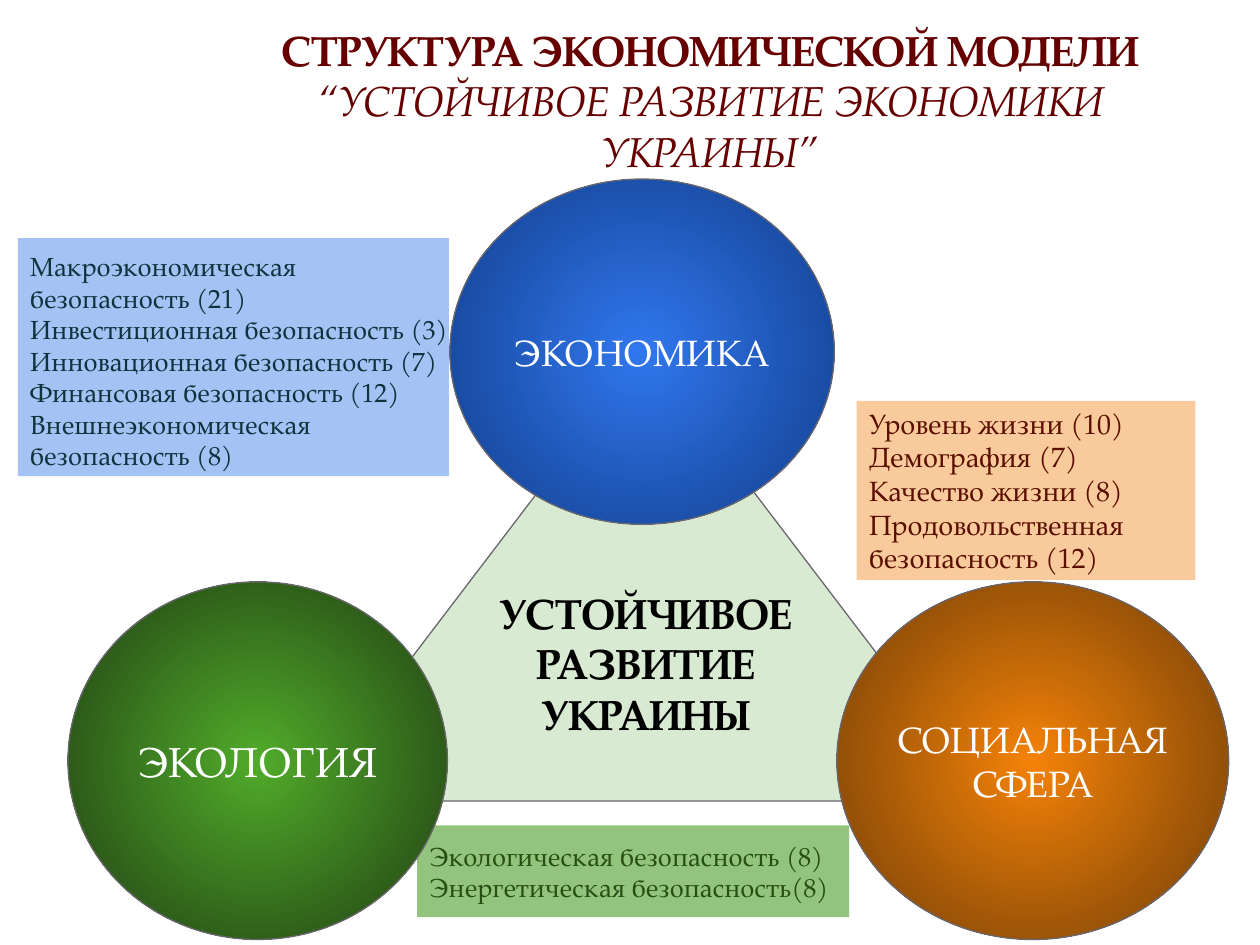
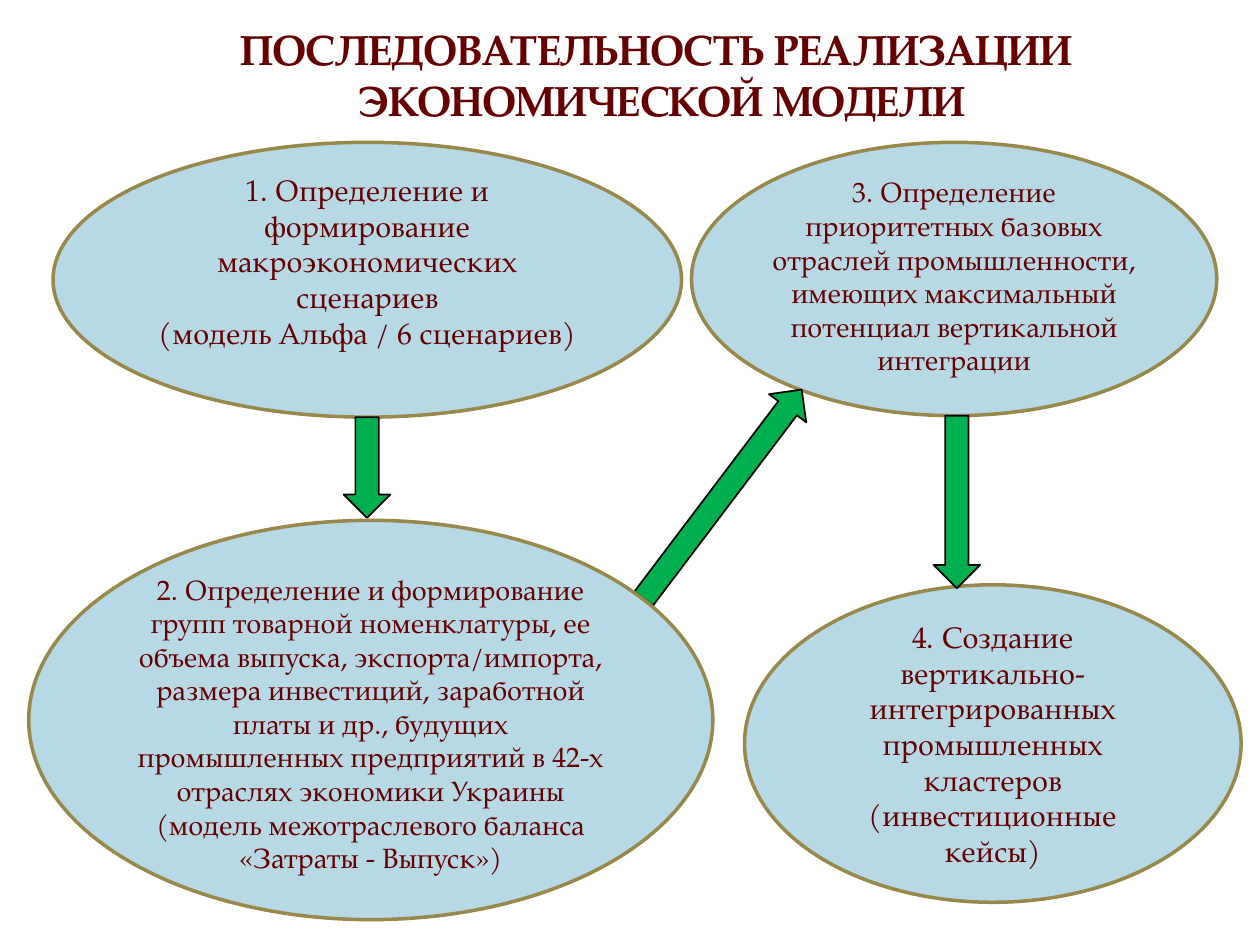
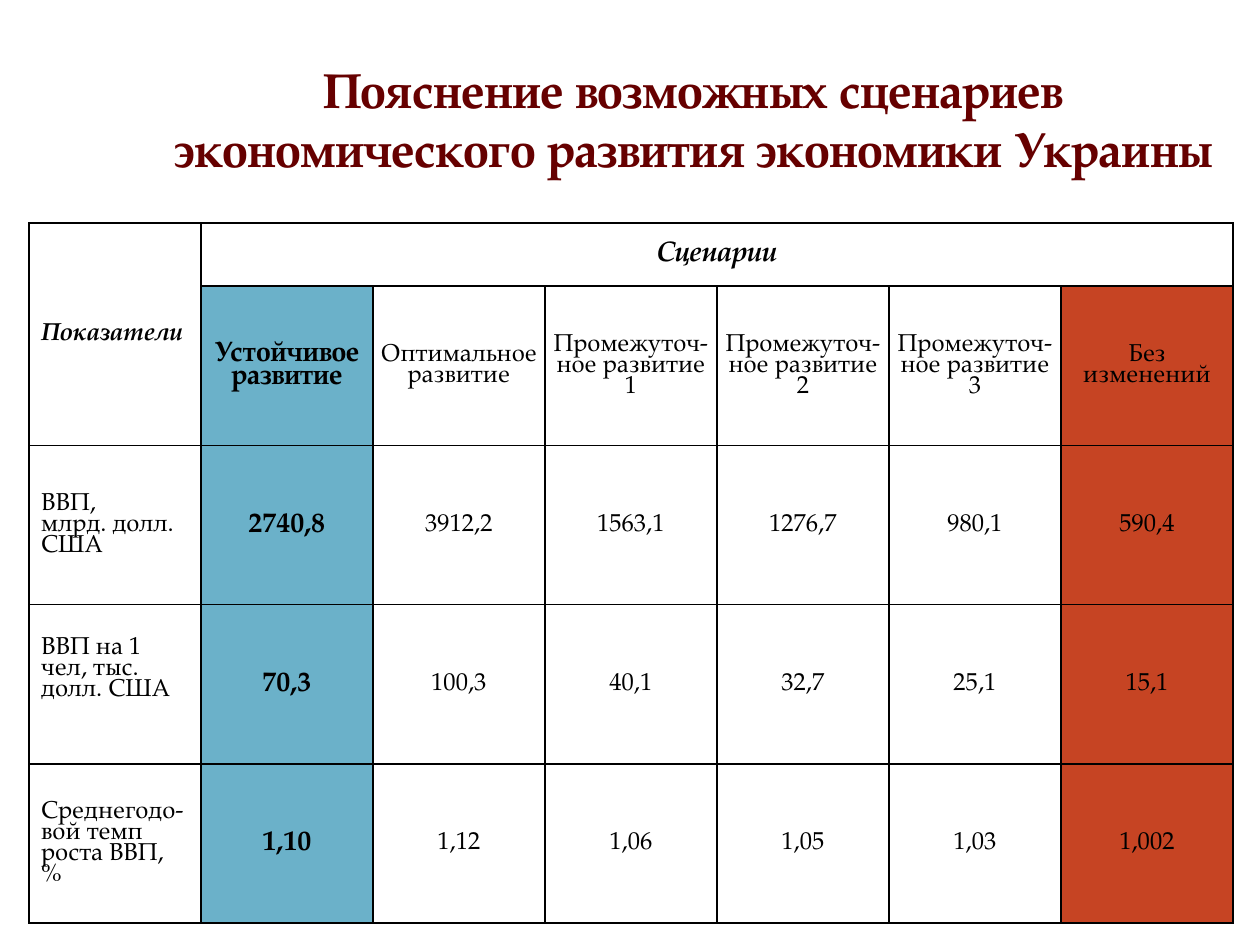
"""Builds three slides on the economic model of sustainable development."""
from copy import deepcopy

from lxml.etree import SubElement
from pptx import Presentation
from pptx.dml.color import RGBColor
from pptx.enum.shapes import MSO_SHAPE as Shape
from pptx.enum.text import MSO_ANCHOR as Anchor, PP_ALIGN as Align
from pptx.oxml.ns import qn
from pptx.util import Cm, Pt

FONT = "TeX Gyre Pagella"
COLORS = {
    "title": "660000", "black": "000000", "white": "FFFFFF", "outline": "69676D",
    "economy_box": "A4C2F4", "economy_text": "0C343D", "economy": "3177EE", "economy_edge": "113D8A",
    "social_box": "F9CB9C", "social_text": "5B0F00", "social": "F48208", "social_edge": "703E08",
    "ecology_box": "93C47D", "ecology_text": "274E13", "ecology": "51AB2A", "ecology_edge": "203E13",
    "triangle": "D9EAD3", "step": "A6D0DF", "step_line": "98894B", "arrow": "00B050",
    "best": "6BB1C9", "worst": "C64423",
}


def rgb(name):
    return RGBColor.from_string(COLORS[name])


def write(frame, text, size=16, color="title", bold=False, italic=False, align=Align.CENTER,
          spacing=None, tail=""):
    """Fill a text frame; text is one paragraph or a list, tail is a closing italic span."""
    paragraphs = [text] if isinstance(text, str) else text
    for index, content in enumerate(paragraphs):
        para = frame.add_paragraph() if index else frame.paragraphs[0]
        para.text = content
        para.alignment = align
        para.line_spacing = spacing
        if tail:
            para.add_run().text = tail
        for span in para.runs:
            in_tail = bool(tail) and span.text == tail
            font = span.font
            font.name, font.size = FONT, Pt(size)
            font.bold, font.italic = bold and not in_tail, italic or in_tail
            font.color.rgb = rgb(color)
        for line_break in para._p.findall(qn("a:br")):
            line_break.insert(0, deepcopy(para.runs[0]._r.rPr))


def set_margins(holder, margins):
    """Set left, top, right and bottom margins of a text frame or cell."""
    (holder.margin_left, holder.margin_top,
     holder.margin_right, holder.margin_bottom) = [Cm(margin) for margin in margins]


class Deck:
    """Holds the presentation style and the current slide."""

    def __init__(self):
        self.deck = Presentation()
        self.deck.slide_width, self.deck.slide_height = Cm(25.4), Cm(19.05)
        self.page = None

    def new_page(self):
        self.page = self.deck.slides.add_slide(self.deck.slide_layouts[6])

    def title(self, place, text, size=24, side=0.25, tail=""):
        frame = self.page.shapes.add_textbox(*map(Cm, place)).text_frame
        frame.word_wrap = True
        frame.vertical_anchor = Anchor.MIDDLE
        set_margins(frame, (side, 0.13, side, 0.13))
        write(frame, text, size=size, bold=True, tail=tail)

    def shape(self, kind, place, fill, edge=None, line=None, width=0.75, alpha=None, rotation=0):
        box = self.page.shapes.add_shape(kind, *map(Cm, place))
        box.shadow.inherit = False
        box.rotation = rotation
        if edge:
            self.radial_fill(box.fill, fill, edge)
        else:
            box.fill.solid()
            box.fill.fore_color.rgb = rgb(fill)
        if alpha:
            color = box._element.spPr.find(qn("a:solidFill"))[0]
            SubElement(color, qn("a:alpha"), val=str(alpha * 1000))
        if line:
            box.line.color.rgb = rgb(line)
            box.line.width = Pt(width)
        else:
            box.line.fill.background()
        return box

    def radial_fill(self, fill, center, edge):
        fill.gradient()
        for stop, name, position in zip(fill.gradient_stops, (center, edge), (0, 1)):
            stop.color.rgb = rgb(name)
            stop.position = position
        gradient = fill._xPr.find(qn("a:gradFill"))
        gradient.remove(gradient.find(qn("a:lin")))
        circle = SubElement(gradient, qn("a:path"), path="circle")
        SubElement(circle, qn("a:fillToRect"), dict.fromkeys("ltrb", "50000"))

    def label(self, box, text, margins=(0, 0, 0, 0), anchor=Anchor.MIDDLE, **style):
        frame = box.text_frame
        frame.word_wrap = True
        frame.vertical_anchor = anchor
        set_margins(frame, margins)
        write(frame, text, **style)

    def note(self, place, topic, text, size=15, right=0.25, anchor=Anchor.MIDDLE):
        box = self.shape(Shape.RECTANGLE, place, topic + "_box")
        self.label(box, text, (0.25, 0.25, right, 0.25), anchor,
                   size=size, color=topic + "_text", align=Align.LEFT)

    def sphere(self, place, topic, text, size=21):
        box = self.shape(Shape.OVAL, place, topic, edge=topic + "_edge", line="outline")
        self.label(box, text, (0, 0.25, 0, 0.25), size=size, color="white")

    def step(self, place, text, size, top=0, bottom=0):
        box = self.shape(Shape.OVAL, place, "step", line="step_line", width=2, alpha=80)
        self.label(box, text, (0, top, 0, bottom), size=size)

    def arrow(self, place, rotation=0):
        self.shape(Shape.DOWN_ARROW, place, "arrow", line="black", width=1, rotation=rotation)

    def table(self, place, rows, heights):
        table = self.page.shapes.add_table(len(rows), len(rows[0]), *map(Cm, place)).table
        table.first_row = table.horz_banding = False
        for row, height in zip(table.rows, heights):
            row.height = Cm(height)
        for row_index, values in enumerate(rows):
            for column, text in enumerate(values):
                self.cell(table.cell(row_index, column), text, row_index, column)
        table.cell(0, 0).merge(table.cell(1, 0))
        table.cell(0, 1).merge(table.cell(0, len(rows[0]) - 1))

    def cell(self, cell, text, row, column):
        properties = cell._tc.get_or_add_tcPr()
        for side in ("a:lnL", "a:lnR", "a:lnT", "a:lnB"):
            border = SubElement(properties, qn(side), w=str(Pt(1)))
            SubElement(SubElement(border, qn("a:solidFill")), qn("a:srgbClr"), val=COLORS["black"])
        cell.fill.solid()
        fills = {1: "best", 6: "worst"} if row else {}
        cell.fill.fore_color.rgb = rgb(fills.get(column, "white"))
        cell.vertical_anchor = Anchor.MIDDLE
        side = 0 if row == 1 and column < 6 else 0.25
        set_margins(cell, (side, 0.13, side, 0.73 if (row, column) == (3, 0) else 0.13))
        if text:
            write(cell.text_frame, text, size=16 if column == 1 else 14, color="black",
                  bold=row == 0 or column == 1, italic=row == 0,
                  align=Align.CENTER if column else Align.LEFT, spacing=0.85)

    def structure_page(self):
        self.new_page()
        self.note((0.36, 4.8, 8.69, 4.8), "economy", [
            "Макроэкономическая безопасность (21)", "Инвестиционная безопасность (3)",
            "Инновационная безопасность (7)", "Финансовая безопасность (12)",
            "Внешнеэкономическая безопасность (8)"], right=0, anchor=Anchor.TOP)
        self.note((17.27, 8.08, 6.83, 3.61), "social", [
            "Уровень жизни (10)", "Демография (7)", "Качество жизни (8)",
            "Продовольственная безопасность (12)"], size=16)
        self.note((8.41, 16.64, 8.71, 1.85), "ecology", [
            "Экологическая безопасность (8)", "Энергетическая безопасность(8)"])
        self.title((4.04, 0.2, 20.55, 3.63), "СТРУКТУРА ЭКОНОМИЧЕСКОЙ МОДЕЛИ ",
                   tail="“УСТОЙЧИВОЕ РАЗВИТИЕ ЭКОНОМИКИ УКРАИНЫ”")
        triangle = self.shape(Shape.ISOSCELES_TRIANGLE, (6.1, 7.06, 13.84, 9.09),
                              "triangle", line="outline")
        triangle.adjustments[0] = 0.5
        self.label(triangle, "УСТОЙЧИВОЕ РАЗВИТИЕ УКРАИНЫ", (0.25, 0.25, 0.25, 1.27),
                   size=24, color="black", bold=True)
        self.sphere((9.07, 3.61, 7.75, 6.96), "economy", "ЭКОНОМИКА")
        self.sphere((16.87, 11.73, 7.9, 7.21), "social", "СОЦИАЛЬНАЯ СФЕРА")
        self.sphere((1.37, 11.73, 7.65, 7.21), "ecology", "ЭКОЛОГИЯ", size=24)

    def sequence_page(self):
        self.new_page()
        self.title((2.54, 0, 21.59, 3), "ПОСЛЕДОВАТЕЛЬНОСТЬ РЕАЛИЗАЦИИ \nЭКОНОМИЧЕСКОЙ МОДЕЛИ")
        self.step((13.94, 2.87, 10.59, 5.51),
                  "3. Определение приоритетных базовых отраслей промышленности, имеющих "
                  "максимальный потенциал вертикальной интеграции", 16, bottom=0.13)
        self.step((15.01, 11.79, 10.01, 6.4),
                  "4. Создание\nвертикально-интегрированных промышленных кластеров "
                  "(инвестиционные кейсы)", 17)
        self.step((1.07, 2.87, 12.67, 5.54), [
            "1. Определение и формирование макроэкономических сценариев",
            "(модель Альфа / 6 сценариев)"], 17, bottom=0.76)
        self.arrow((18.82, 8.38, 0.94, 3.48))
        self.arrow((6.93, 8.41, 0.94, 2.03))
        self.arrow((14.1, 7.32, 0.94, 5.28), rotation=217.1)
        self.step((0.58, 10.49, 13.79, 8.05), [
            "2. Определение и формирование групп товарной номенклатуры, ее объема выпуска, "
            "экспорта/импорта, размера инвестиций, заработной платы и др., будущих "
            "промышленных предприятий в 42-х отраслях экономики Украины",
            "(модель межотраслевого баланса «Затраты - Выпуск»)"], 16, top=0.13)

    def scenario_page(self):
        self.new_page()
        self.title((3, 0.79, 21.95, 3.18),
                   "Пояснение возможных сценариев\nэкономического развития экономики Украины",
                   size=28, side=0)
        middle = [f"Промежуточ-ное развитие\n{number}" for number in (1, 2, 3)]
        rows = [
            ["Показатели", "Сценарии", "", "", "", "", ""],
            ["", "Устойчивое развитие", "Оптимальное развитие", *middle, "Без изменений"],
            ["ВВП,\nмлрд. долл. США", "2740,8", "3912,2", "1563,1", "1276,7", "980,1", "590,4"],
            ["ВВП на 1 чел, тыс. долл. США", "70,3", "100,3", "40,1", "32,7", "25,1", "15,1"],
            ["Среднегодо-вой темп роста ВВП, %", "1,10", "1,12", "1,06", "1,05", "1,03", "1,002"],
        ]
        self.table((0.58, 4.5, 24.28, 14.1), rows, [1.27] + [3.21] * 4)


def main():
    deck = Deck()
    deck.structure_page()
    deck.sequence_page()
    deck.scenario_page()
    deck.deck.save("out.pptx")


if __name__ == "__main__":
    main()
